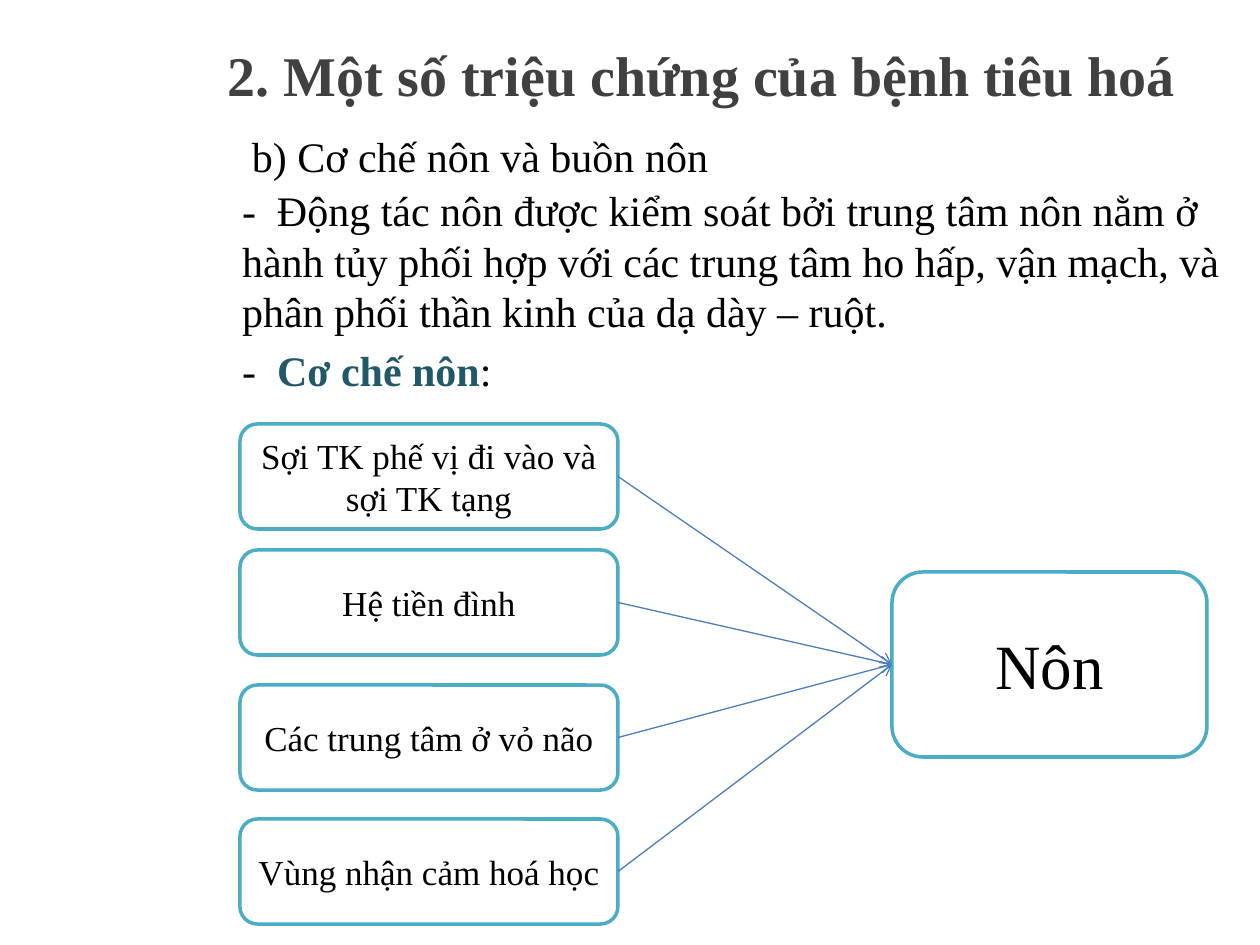
from lxml.etree import SubElement
from pptx import Presentation
from pptx.dml.color import RGBColor
from pptx.enum.shapes import MSO_CONNECTOR, MSO_SHAPE
from pptx.enum.text import MSO_ANCHOR, MSO_AUTO_SIZE, PP_ALIGN
from pptx.oxml.ns import qn
from pptx.util import Emu, Pt

PX_PER_INCH = 126
FONT = "Times New Roman"
BLACK, WHITE = "000000", "FFFFFF"
TITLE_GREY, TEAL = "404040", "215968"
BORDER, ARROW = "4BACC6", "4B7EBC"
LEFT_SITE, RIGHT_SITE = 1, 3

CAUSES = [
    (424, "Sợi TK phế vị đi vào và sợi TK tạng"),
    (550, "Hệ tiền đình"),
    (685, "Các trung tâm ở vỏ não"),
    (819, "Vùng nhận cảm hoá học"),
]
MECHANISM = [
    [("-  Động tác nôn được kiểm soát bởi trung tâm nôn nằm ở hành tủy "
      "phối hợp với các trung tâm ho hấp, vận mạch, và phân phối thần kinh "
      "của dạ dày – ruột.", BLACK, False)],
    [("-  ", BLACK, False), ("Cơ chế nôn", TEAL, True), (":", BLACK, False)],
]


def px(length):
    return Emu(round(length * 914400 / PX_PER_INCH))


def color(hex_value):
    return RGBColor.from_string(hex_value)


def place(shape, left, top, width, height):
    shape.left, shape.top = px(left), px(top)
    shape.width, shape.height = px(width), px(height)


def set_frame(frame, anchor, left=13, top=6):
    frame.word_wrap = True
    frame.auto_size = MSO_AUTO_SIZE.NONE
    frame.vertical_anchor = anchor
    frame.margin_left, frame.margin_top = px(left), px(top)
    frame.margin_right, frame.margin_bottom = px(13), px(6)


def add_run(paragraph, text, size, hex_value=BLACK, bold=False):
    run = paragraph.add_run()
    run.text = text
    run.font.name = FONT
    run.font.size = Pt(size)
    run.font.bold = bold
    run.font.color.rgb = color(hex_value)


def add_title(slide, text):
    title = slide.shapes.title
    place(title, 215, -7, 1037, 162)
    set_frame(title.text_frame, MSO_ANCHOR.MIDDLE)
    paragraph = title.text_frame.paragraphs[0]
    paragraph.alignment = PP_ALIGN.LEFT
    add_run(paragraph, text, 32, TITLE_GREY, True)


def add_subheading(slide, text):
    subheading = slide.shapes.add_textbox(px(208), px(113), px(1170), px(84))
    set_frame(subheading.text_frame, MSO_ANCHOR.TOP, left=44, top=17)
    add_run(subheading.text_frame.paragraphs[0], text, 24)


def add_dash_list(slide, items):
    body = slide.placeholders[1]
    place(body, 188, 179, 1046, 241)
    frame = body.text_frame
    set_frame(frame, MSO_ANCHOR.TOP, left=54)
    for index, runs in enumerate(items):
        paragraph = frame.add_paragraph() if index else frame.paragraphs[0]
        properties = paragraph._p.get_or_add_pPr()
        properties.set("marL", "0")
        properties.set("indent", "0")
        SubElement(properties, qn("a:buNone"))
        paragraph.space_before = Pt(4.8 if index else 0)
        for text, hex_value, bold in runs:
            add_run(paragraph, text, 24, hex_value, bold)


def add_node(slide, left, top, width, height, text, size):
    node = slide.shapes.add_shape(
        MSO_SHAPE.ROUNDED_RECTANGLE, px(left), px(top), px(width), px(height))
    node.shadow.inherit = False
    node.fill.solid()
    node.fill.fore_color.rgb = color(WHITE)
    node.line.color.rgb = color(BORDER)
    node.line.width = Pt(2)
    set_frame(node.text_frame, MSO_ANCHOR.MIDDLE)
    paragraph = node.text_frame.paragraphs[0]
    paragraph.alignment = PP_ALIGN.CENTER
    add_run(paragraph, text, size)
    return node


def add_arrow(slide, cause, effect):
    arrow = slide.shapes.add_connector(MSO_CONNECTOR.STRAIGHT, 0, 0, 0, 0)
    arrow.begin_connect(cause, RIGHT_SITE)
    arrow.end_connect(effect, LEFT_SITE)
    arrow.line.color.rgb = color(ARROW)
    arrow.line.width = Pt(0.75)
    SubElement(arrow.line._get_or_add_ln(), qn("a:tailEnd"), type="arrow")
    SubElement(arrow._element.spPr, qn("a:effectLst"))


def main():
    deck = Presentation()
    deck.slide_width, deck.slide_height = px(1260), px(945)
    slide = deck.slides.add_slide(deck.slide_layouts[1])
    add_title(slide, "2. Một số triệu chứng của bệnh tiêu hoá")
    add_subheading(slide, "b) Cơ chế nôn và buồn nôn")
    add_dash_list(slide, MECHANISM)
    causes = [add_node(slide, 240, top, 378, 105, text, 20)
              for top, text in CAUSES]
    vomiting = add_node(slide, 892, 572, 315, 185, "Nôn", 36)
    for cause in causes:
        add_arrow(slide, cause, vomiting)
    deck.save("out.pptx")


if __name__ == "__main__":
    main()
